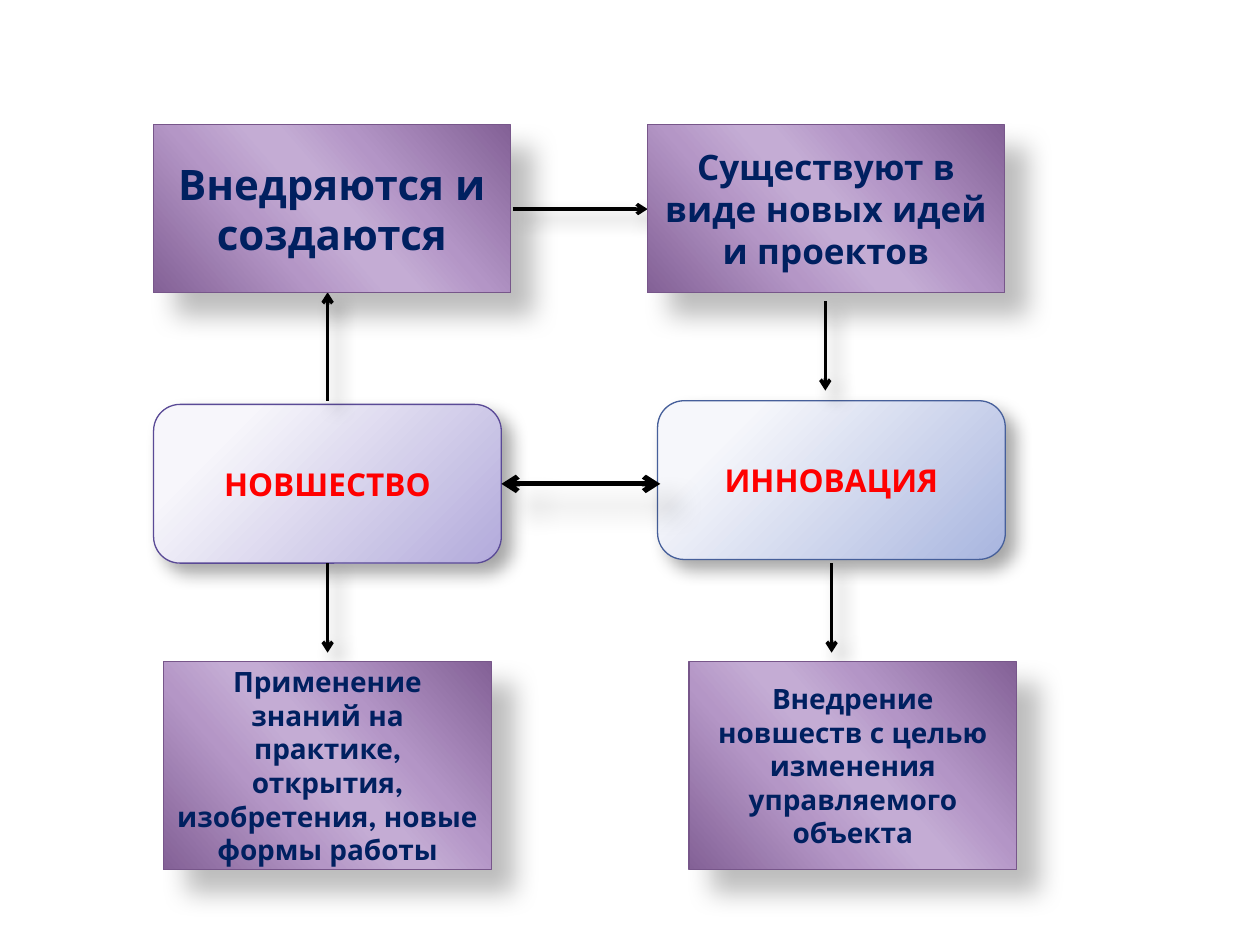
from lxml import etree
from pptx import Presentation
from pptx.dml.color import RGBColor
from pptx.enum.shapes import MSO_CONNECTOR, MSO_SHAPE
from pptx.enum.text import MSO_ANCHOR, PP_ALIGN
from pptx.oxml.ns import qn
from pptx.util import Pt

RECTANGLE = MSO_SHAPE.RECTANGLE
ROUNDED = MSO_SHAPE.ROUNDED_RECTANGLE
STRAIGHT = MSO_CONNECTOR.STRAIGHT
MIDDLE = MSO_ANCHOR.MIDDLE
CENTER = PP_ALIGN.CENTER

COLORS = {
    "navy": "002060", "red": "FF0000", "black": "000000",
    "plum_line": "77568A", "violet_line": "5A4A96", "blue_line": "465F9A",
}
# Gradient stops: (percent, colour)
PLUM = [(0, "836196"), (33, "B395C6"), (47, "C4ACD4"),
        (53, "C4ACD4"), (68, "B496C6"), (100, "836196")]
VIOLET = [(20, "F7F6FB"), (100, "B2AADB")]
BLUE = [(20, "F6F7FB"), (100, "A8B5DF")]
# Shadows: opacity percent, blur and distance in points
NEAR = (35, 10.2, 8)
FAR = (26, 15, 18)


def add_child(parent, tag, **attributes):
    child = etree.SubElement(parent, qn(tag))
    for name, value in attributes.items():
        child.set(name, str(value))
    return child


class Diagram:
    font = "League Spartan"

    def __init__(self, slide):
        self.slide = slide

    def outline(self, shape, color, width):
        shape.line.color.rgb = RGBColor.from_string(COLORS[color])
        shape.line.width = Pt(width)

    def shadow(self, shape, style):
        opacity, blur, distance = style
        effects = add_child(shape._element.spPr, "a:effectLst")
        outer = add_child(effects, "a:outerShdw", blurRad=Pt(blur), dist=Pt(distance),
                          dir=45 * 60000, algn="tl", rotWithShape=0)
        color = add_child(outer, "a:srgbClr", val=COLORS["black"])
        add_child(color, "a:alpha", val=opacity * 1000)

    def gradient(self, shape, stops, radial):
        fill = etree.Element(qn("a:gradFill"), rotWithShape="1")
        stop_list = add_child(fill, "a:gsLst")
        for percent, color in stops:
            stop = add_child(stop_list, "a:gs", pos=percent * 1000)
            add_child(stop, "a:srgbClr", val=color)
        if radial:
            circle = add_child(fill, "a:path", path="circle")
            add_child(circle, "a:fillToRect", l=-15000, t=-15000, r=115000, b=115000)
        else:
            add_child(fill, "a:lin", ang=139 * 60000, scaled=0)
        shape._element.spPr.find(qn("a:prstGeom")).addnext(fill)

    def box(self, kind, bounds, stops, line, shadow, lines, size, color):
        box = self.slide.shapes.add_shape(kind, *map(Pt, bounds))
        self.outline(box, line, 0.75)
        self.gradient(box, stops, radial=kind == ROUNDED)
        self.shadow(box, shadow)
        frame = box.text_frame
        frame.word_wrap = True
        frame.vertical_anchor = MIDDLE
        for index, text in enumerate(lines):
            para = frame.add_paragraph() if index else frame.paragraphs[0]
            para.alignment = CENTER
            span = para.add_run()
            span.text = text
            span.font.name = self.font
            span.font.size = Pt(size)
            span.font.bold = True
            span.font.color.rgb = RGBColor.from_string(COLORS[color])

    def term(self, left, top, text, stops, line):
        self.box(ROUNDED, (left, top, 198.7, 90.7), stops, line, NEAR, [text], 18, "red")

    def note(self, bounds, lines, size):
        self.box(RECTANGLE, bounds, PLUM, "plum_line", FAR, lines, size, "navy")

    def arrow(self, start, end, width=2, shadow=NEAR, double=False):
        arrow = self.slide.shapes.add_connector(STRAIGHT, *map(Pt, start + end))
        self.outline(arrow, "black", width)
        line = arrow.line._get_or_add_ln()
        if double:
            add_child(line, "a:headEnd", type="arrow")
        add_child(line, "a:tailEnd", type="arrow")
        self.shadow(arrow, shadow)


def main():
    deck = Presentation()
    deck.slide_width, deck.slide_height = Pt(720), Pt(540)
    diagram = Diagram(deck.slides.add_slide(deck.slide_layouts[6]))

    # Two central terms
    diagram.term(87.8, 231.1, "НОВШЕСТВО", VIOLET, "violet_line")
    diagram.term(375.8, 229, "ИННОВАЦИЯ", BLUE, "blue_line")
    diagram.arrow((286.5, 276.5), (377.3, 276.5), 3, FAR, double=True)

    # Lower row
    for x in (187.2, 475.2):
        diagram.arrow((x, 321.8), (x, 373))
    diagram.note((93.6, 378, 187.2, 118.8),
                 ["Применение знаний на практике,",
                  "открытия, изобретения, новые формы работы"], 16)
    diagram.note((393.8, 378, 187.2, 118.8),
                 ["Внедрение новшеств с целью изменения управляемого объекта"], 16)

    # Upper row
    diagram.arrow((187.2, 229), (187.2, 167))
    diagram.arrow((293, 119.5), (370.1, 119.5))
    diagram.note((87.8, 71.3, 203.8, 95.8), ["Внедряются и создаются"], 24)
    diagram.note((370.1, 71.3, 203.8, 95.8),
                 ["Существуют в виде новых идей и проектов"], 20)
    diagram.arrow((471.6, 172.1), (471.6, 223.2))

    deck.save("out.pptx")


if __name__ == "__main__":
    main()
